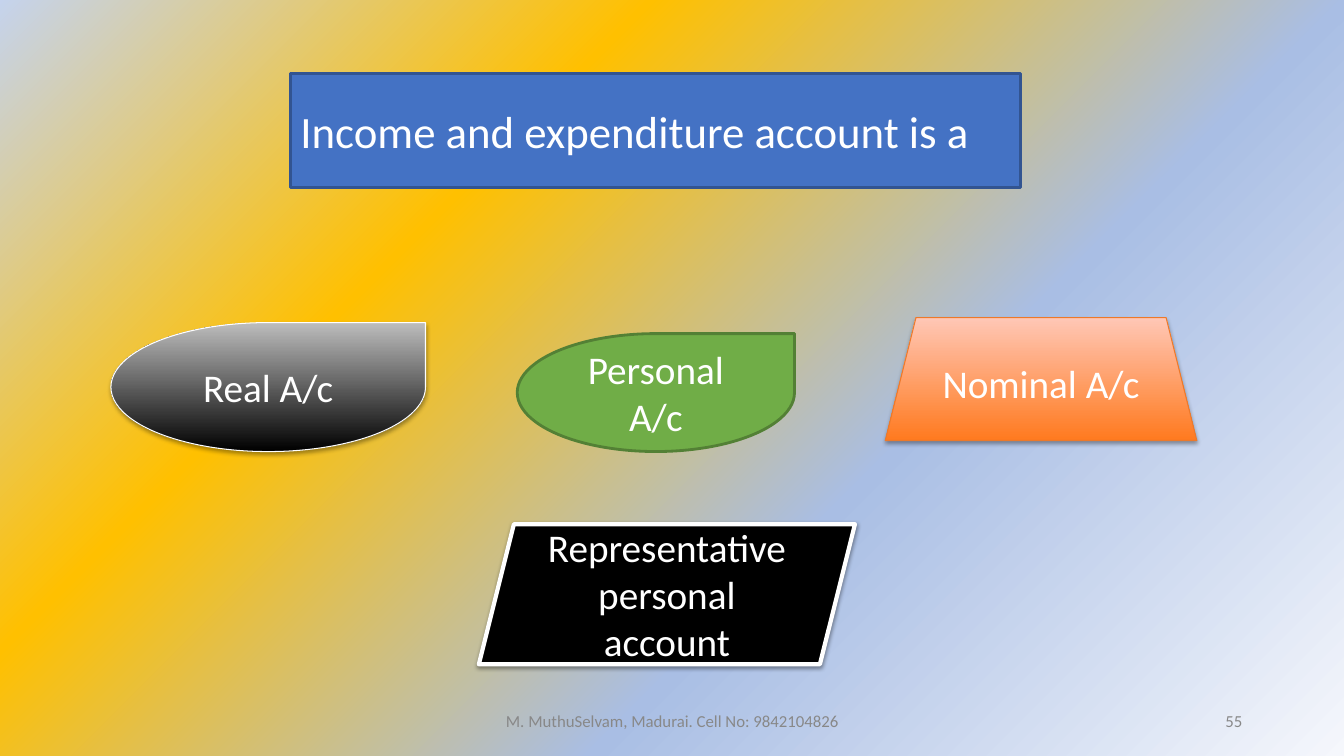
from copy import deepcopy
from dataclasses import dataclass
from typing import Any, Optional

from lxml import etree
from pptx import Presentation
from pptx.dml.color import RGBColor
from pptx.enum.shapes import MSO_SHAPE
from pptx.enum.text import MSO_ANCHOR, MSO_AUTO_SIZE, PP_ALIGN
from pptx.oxml.ns import qn
from pptx.util import Inches, Pt

TEARDROP = MSO_SHAPE.TEAR
TRAPEZOID = MSO_SHAPE.TRAPEZOID
PARALLELOGRAM = MSO_SHAPE.PARALLELOGRAM
LEFT, CENTER, RIGHT = PP_ALIGN.LEFT, PP_ALIGN.CENTER, PP_ALIGN.RIGHT
MIDDLE = MSO_ANCHOR.MIDDLE
NO_AUTOFIT = MSO_AUTO_SIZE.NONE

WHITE = RGBColor(0xFF, 0xFF, 0xFF)
BLACK = RGBColor(0x00, 0x00, 0x00)
SILVER = RGBColor(0xBD, 0xBD, 0xBD)
FOOTER_GRAY = RGBColor(0x88, 0x88, 0x88)
BLUE = RGBColor(0x44, 0x72, 0xC4)
DARK_BLUE = RGBColor(0x32, 0x54, 0x91)
GREEN = RGBColor(0x70, 0xAD, 0x47)
DARK_GREEN = RGBColor(0x53, 0x80, 0x35)
ORANGE = RGBColor(0xFF, 0x7A, 0x1F)
PEACH = RGBColor(0xFF, 0xC7, 0xB6)
DARK_ORANGE = RGBColor(0xEC, 0x79, 0x2B)
PALE_BLUE = RGBColor(0xF5, 0xF7, 0xFC)
SKY_BLUE = RGBColor(0xA9, 0xBE, 0xE4)
AMBER = RGBColor(0xFF, 0xC0, 0x00)
MIST_BLUE = RGBColor(0xC5, 0xD3, 0xED)

Box = tuple[float, float, float, float]
Stops = list[tuple[float, RGBColor]]

BACKGROUND_STOPS: Stops = [(0, PALE_BLUE), (0.36, SKY_BLUE), (0.69, AMBER), (1, MIST_BLUE)]


@dataclass
class Shadow:
    opacity: int
    distance: float
    blur: float = 3.1


@dataclass
class Answer:
    text: str
    geometry: Any
    box: Box
    stops: Stops
    line: RGBColor
    line_width: float
    shadow: Optional[Shadow] = None


@dataclass
class FooterItem:
    text: str
    box: Box
    align: Any


ANSWERS = [
    Answer("Real A/c", TEARDROP, (1.1, 3.2, 3.12, 1.28),
           [(0, BLACK), (1, SILVER)], WHITE, 0.75, Shadow(35, 1.8)),
    Answer("Nominal A/c", TRAPEZOID, (8.78, 3.15, 3.09, 1.22),
           [(0, ORANGE), (1, PEACH)], DARK_ORANGE, 0.75, Shadow(35, 1.8)),
    Answer("Representative personal account", PARALLELOGRAM, (4.75, 5.2, 3.73, 1.39),
           [(0, BLACK)], WHITE, 3, Shadow(38, 1.6)),
    Answer("Personal A/c", TEARDROP, (5.13, 3.31, 2.75, 1.17),
           [(0, GREEN)], DARK_GREEN, 2),
]

FOOTER = [
    FooterItem("M. MuthuSelvam, Madurai. Cell No: 9842104826", (4.42, 6.95, 4.5, 0.4), CENTER),
    FooterItem("55", (9.42, 6.95, 3, 0.4), RIGHT),
]


def apply(target: Any, values: dict[str, Any]) -> None:
    for name, value in values.items():
        setattr(target, name, value)


def paint(fill: Any, element: Any, stops: Stops, angle: float = 90) -> None:
    if len(stops) == 1:
        fill.solid()
        fill.fore_color.rgb = stops[0][1]
        return
    fill.gradient()
    fill.gradient_angle = angle
    stop_list = element.find(".//" + qn("a:gsLst"))
    for _ in stops[2:]:
        stop_list.append(deepcopy(stop_list[0]))
    for stop, (position, color) in zip(fill.gradient_stops, stops):
        stop.position = position
        stop.color.rgb = color


def outline(shape: Any, color: RGBColor, width: float) -> None:
    shape.line.color.rgb = color
    shape.line.width = Pt(width)


def cast_shadow(shape: Any, shadow: Shadow) -> None:
    effects = shape.element.spPr.find(qn("a:effectLst"))
    outer = etree.SubElement(effects, qn("a:outerShdw"), {
        "blurRad": str(Pt(shadow.blur)), "dist": str(Pt(shadow.distance)),
        "dir": "5400000", "rotWithShape": "0"})
    color = etree.SubElement(outer, qn("a:srgbClr"), val=str(BLACK))
    etree.SubElement(color, qn("a:alpha"), val=str(shadow.opacity * 1000))


def write(shape: Any, text: str, size: float, color: RGBColor, align: Any) -> None:
    frame = shape.text_frame
    frame.text = text
    apply(frame, {"word_wrap": True, "auto_size": NO_AUTOFIT, "vertical_anchor": MIDDLE})
    paragraph = frame.paragraphs[0]
    paragraph.alignment = align
    font = paragraph.runs[0].font
    apply(font, {"name": "Calibri", "size": Pt(size)})
    font.color.rgb = color


def add_question(slide: Any) -> None:
    banner = slide.shapes.title
    apply(banner, {"left": Inches(2.88), "top": Inches(0.73),
                   "width": Inches(7.24), "height": Inches(1.13)})
    wave = etree.SubElement(banner.element.spPr, qn("a:prstGeom"), prst="wave")
    etree.SubElement(wave, qn("a:avLst"))
    banner.adjustments[0] = 0.125
    banner.adjustments[1] = 0.001
    paint(banner.fill, banner.element, [(0, BLUE)])
    outline(banner, DARK_BLUE, 2)
    write(banner, "Income and expenditure account is a", 32, WHITE, LEFT)


def add_answer(slide: Any, answer: Answer) -> None:
    shape = slide.shapes.add_shape(answer.geometry, *map(Inches, answer.box))
    shape.shadow.inherit = False
    paint(shape.fill, shape.element, answer.stops)
    outline(shape, answer.line, answer.line_width)
    if answer.shadow:
        cast_shadow(shape, answer.shadow)
    write(shape, answer.text, 28, WHITE, CENTER)


def add_footer_item(slide: Any, item: FooterItem) -> None:
    box = slide.shapes.add_textbox(*map(Inches, item.box))
    write(box, item.text, 12, FOOTER_GRAY, item.align)


def main() -> None:
    deck = Presentation()
    apply(deck, {"slide_width": Inches(13.33), "slide_height": Inches(7.5)})
    slide = deck.slides.add_slide(deck.slide_layouts[5])
    paint(slide.background.fill, slide.element, BACKGROUND_STOPS, angle=135)
    add_question(slide)
    for answer in ANSWERS:
        add_answer(slide, answer)
    for item in FOOTER:
        add_footer_item(slide, item)
    deck.save("out.pptx")


if __name__ == "__main__":
    main()
